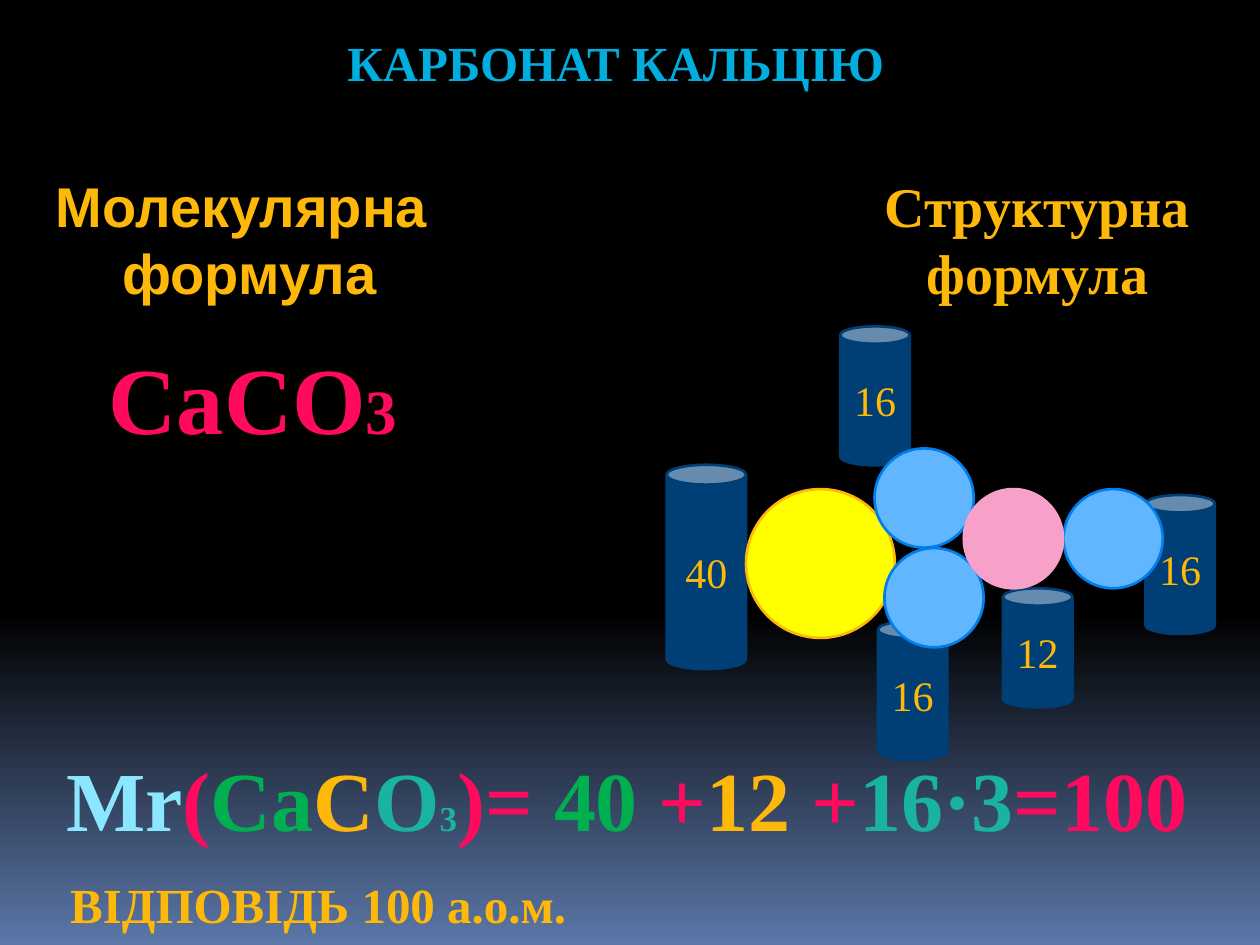
from pptx import Presentation
from pptx.dml.color import RGBColor
from pptx.enum.shapes import MSO_SHAPE as Shape
from pptx.enum.text import MSO_ANCHOR as Anchor, PP_ALIGN as Align
from pptx.util import Cm, Pt

SERIF = "Times New Roman"
GOLD = "FEB80A"
PINK = "FF0A5E"
GREEN = "00B050"
TEAL = "1AB39F"
NAVY = "003F75"
OXYGEN = ("61B6FF", "007EEB")


def color(value):
    return RGBColor.from_string(value)


def lengths(*values):
    return [Cm(value) for value in values]


def style_run(run, size, value, bold=True, name=SERIF):
    run.font.size = Pt(size)
    run.font.name = name
    run.font.bold = bold
    run.font.color.rgb = color(value)


def set_background(slide):
    fill = slide.background.fill
    fill.gradient()
    fill.gradient_angle = 270
    for stop, position, value in zip(fill.gradient_stops, (0.65, 1), ("000000", "5B77A8")):
        stop.position = position
        stop.color.rgb = color(value)


def fill_text(shape, text, size, value, bold=True, name=SERIF, wrap=False):
    text_frame = shape.text_frame
    text_frame.word_wrap = wrap
    text_frame.text = text
    for paragraph in text_frame.paragraphs:
        paragraph.alignment = Align.CENTER
        for run in paragraph.runs:
            style_run(run, size, value, bold, name)


def set_title(slide, box, text, size, value):
    title = slide.shapes.title
    title.left, title.top, title.width, title.height = lengths(*box)
    fill_text(title, text, size, value)
    title.text_frame.vertical_anchor = Anchor.TOP


def add_label(slide, box, text, size, value, **options):
    label = slide.shapes.add_textbox(*lengths(*box))
    fill_text(label, text, size, value, **options)


def add_formula(slide, box, parts, align):
    formula = slide.shapes.add_textbox(*lengths(*box))
    formula.text_frame.word_wrap = True
    paragraph = formula.text_frame.paragraphs[0]
    paragraph.alignment = align
    for text, size, value in parts:
        run = paragraph.add_run()
        run.text = text
        style_run(run, size, value)


def add_solid(slide, kind, box, fill, line):
    shape = slide.shapes.add_shape(kind, *lengths(*box))
    shape.shadow.inherit = False
    shape.fill.solid()
    shape.fill.fore_color.rgb = color(fill)
    shape.line.color.rgb = color(line)
    shape.line.width = Pt(1.5)
    return shape


def add_mass(slide, box, mass):
    cylinder = add_solid(slide, Shape.CAN, box, NAVY, NAVY)
    fill_text(cylinder, mass, 24, GOLD, bold=False)
    cylinder.text_frame.vertical_anchor = Anchor.MIDDLE


def add_atom(slide, left, top, diameter, fill, line):
    add_solid(slide, Shape.OVAL, (left, top, diameter, diameter), fill, line)


def main():
    presentation = Presentation()
    presentation.slide_width = Cm(25.4)
    presentation.slide_height = Cm(19.05)
    slide = presentation.slides.add_slide(presentation.slide_layouts[5])
    set_background(slide)

    set_title(slide, (6.68, 0.53, 11.46, 1.45), "КАРБОНАТ КАЛЬЦІЮ", 28, "00ADDC")
    add_label(slide, (17.55, 3.33, 6.73, 3), "Структурна\nформула", 32, GOLD)
    add_label(slide, (0.84, 3.33, 8.38, 3), "Молекулярна \nформула", 32, GOLD, name="Arial")
    add_label(slide, (0.51, 17.5, 11.81, 1.45), "ВІДПОВІДЬ 100 а.о.м.", 28, GOLD, wrap=True)

    masses = [
        (20.22, 11.86, 1.4, 2.4, "12"),
        (16.94, 6.58, 1.4, 2.8, "16"),
        (17.7, 12.52, 1.4, 2.8, "16"),
        (23.09, 9.98, 1.4, 2.8, "16"),
        (13.44, 9.37, 1.6, 4.12, "40"),
    ]
    for *box, mass in masses:
        add_mass(slide, box, mass)

    add_atom(slide, 15.04, 9.86, 3, "FFFF00", GOLD)
    for left, top in [(17.63, 9.04), (17.83, 11.05), (21.44, 9.86)]:
        add_atom(slide, left, top, 2, *OXYGEN)
    add_atom(slide, 19.43, 9.86, 2, "F7A1CA", "F7A1CA")

    molecule = [("CaCO", 54, PINK), ("3", 36, PINK)]
    add_formula(slide, (1.4, 6.73, 7.4, 2.57), molecule, Align.CENTER)
    calculation = [
        ("Mr", 48, "8BE6FF"),
        ("(", 48, PINK),
        ("Ca", 48, GREEN),
        ("C", 48, GOLD),
        ("O", 48, TEAL),
        ("3", 20, TEAL),
        (")= ", 48, PINK),
        ("40", 48, GREEN),
        (" +", 48, PINK),
        ("12", 48, GOLD),
        (" +", 48, PINK),
        ("16·3", 48, TEAL),
        ("=100", 48, PINK),
    ]
    add_formula(slide, (1.09, 14.94, 23.39, 2.31), calculation, Align.LEFT)

    presentation.save("out.pptx")


if __name__ == "__main__":
    main()
